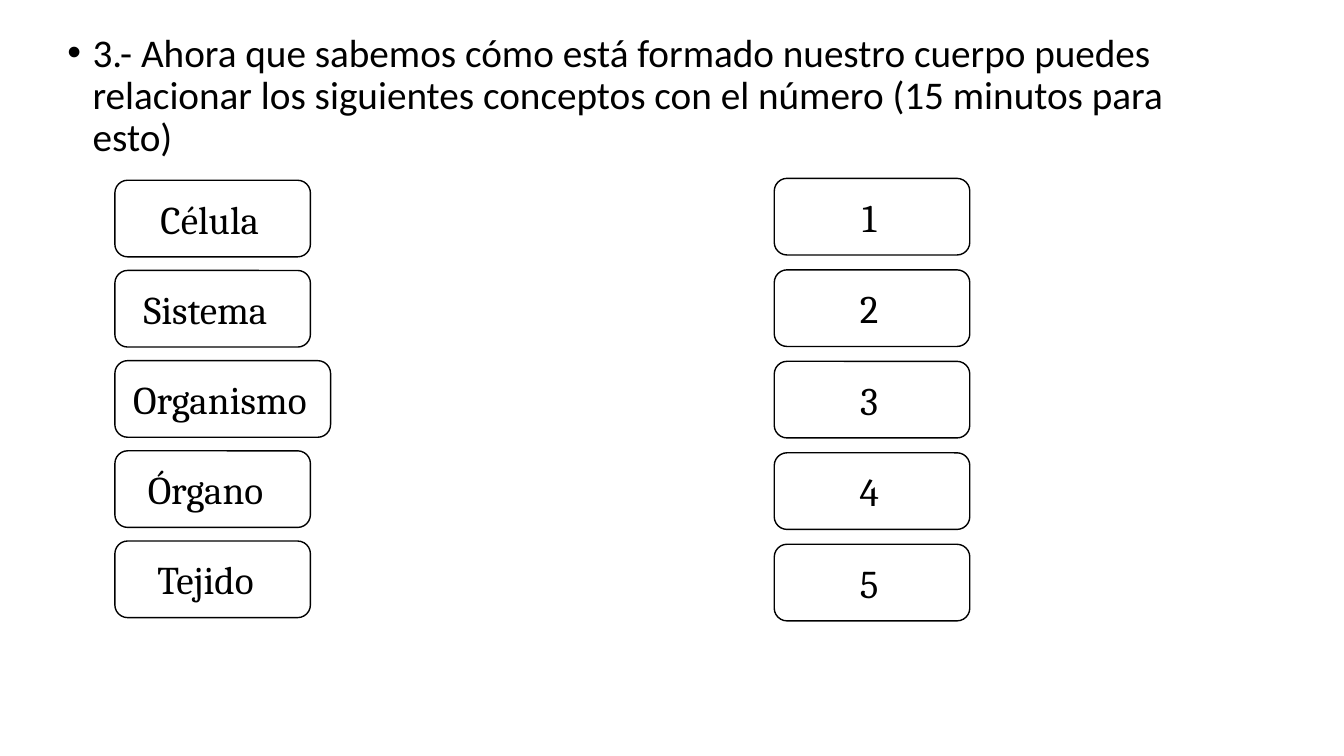
import pptx
import pptx.dml.color
import pptx.enum.shapes
import pptx.enum.text
import pptx.oxml
import pptx.oxml.ns
import pptx.util

COLORS = {"ink": "000000", "paper": "FFFFFF"}


class Deck:
    """Draws on one slide, with lengths in hundredths of its width and height."""

    def __init__(self, prs):
        self.prs = prs
        self.s = prs.slides.add_slide(prs.slide_layouts[6])
        self.body_font, self.label_font = "Calibri", "Cambria"
        self.size, self.gap_size = 28, 18

    def color(self, name):
        return pptx.dml.color.RGBColor.from_string(COLORS[name])

    def box(self, x, y, w, h):
        sw, sh = self.prs.slide_width / 100, self.prs.slide_height / 100
        return int(x * sw), int(y * sh), int(w * sw), int(h * sh)

    def run(self, p, text, font, size):
        r = p.add_run()
        r.text = text
        r.font.name = font
        r.font.size = pptx.util.Pt(size)
        r.font.color.rgb = self.color("ink")

    def bullet(self, text, x, y, w, h):
        tf = self.s.shapes.add_textbox(*self.box(x, y, w, h)).text_frame
        tf.word_wrap = True
        p = tf.paragraphs[0]
        p.line_spacing = 0.9
        p.space_before = pptx.util.Pt(10)
        self.run(p, text, self.body_font, self.size)
        pPr = p._p.get_or_add_pPr()
        indent = pptx.util.Inches(0.25)
        pPr.set("marL", str(indent))
        pPr.set("indent", str(-indent))
        ns = pptx.oxml.ns.nsdecls("a")
        pPr.append(pptx.oxml.parse_xml(f'<a:buFont {ns} typeface="Arial"/>'))
        pPr.append(pptx.oxml.parse_xml(f'<a:buChar {ns} char="•"/>'))

    def card(self, text, x, y, w, h):
        shape = pptx.enum.shapes.MSO_SHAPE.ROUNDED_RECTANGLE
        sp = self.s.shapes.add_shape(shape, *self.box(x, y, w, h))
        sp.shadow.inherit = False
        sp.fill.solid()
        sp.fill.fore_color.rgb = self.color("paper")
        sp.line.color.rgb = self.color("ink")
        sp.line.width = pptx.util.Pt(1)
        tf = sp.text_frame
        tf.word_wrap = True
        tf.vertical_anchor = pptx.enum.text.MSO_ANCHOR.MIDDLE
        p = tf.paragraphs[0]
        p.alignment = pptx.enum.text.PP_ALIGN.CENTER
        self.run(p, text, self.label_font, self.size)
        self.run(p, " ", self.body_font, self.gap_size)

    def column(self, texts, x, y, pitch, w, h, wide=None):
        wide = wide or {}
        for i, text in enumerate(texts):
            self.card(text, x, y + i * pitch, wide.get(text, w), h)


def main():
    prs = pptx.Presentation()
    prs.slide_width = pptx.util.Inches(13.33)
    prs.slide_height = pptx.util.Inches(7.5)
    deck = Deck(prs)
    deck.bullet(
        "3.- Ahora que sabemos cómo está formado nuestro cuerpo puedes "
        "relacionar los siguientes conceptos con el número "
        "(15 minutos para esto)",
        4.28, 3.73, 86.27, 20.67)
    w, h = 14.55, 10.13
    concepts = ["Célula", "Sistema ", "Organismo", "Órgano ", "Tejido "]
    deck.column(concepts, 8.55, 23.85, 11.93, w, h, {"Organismo": 16.05})
    deck.column("12345", 57.61, 23.6, 12.1, w, h)
    prs.save("out.pptx")


if __name__ == "__main__":
    main()
